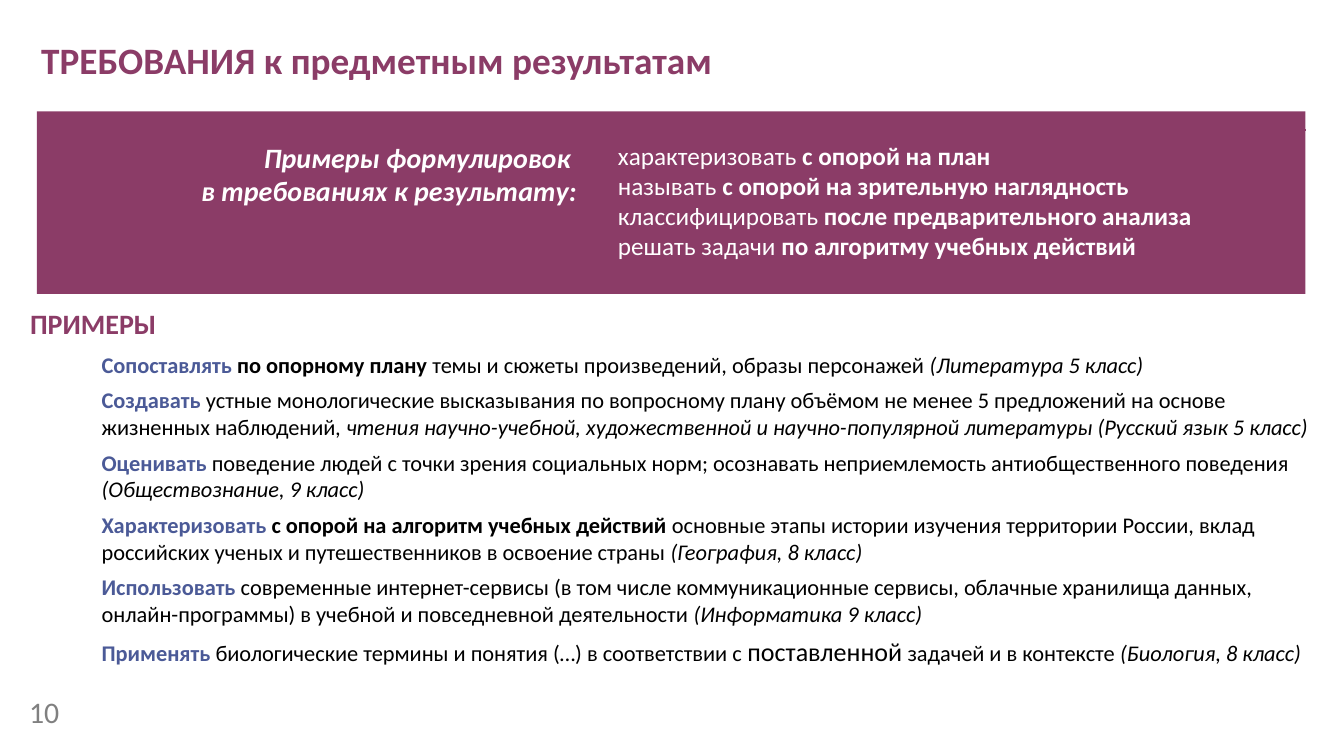
from lxml import etree
from pptx import Presentation
from pptx import util as u
from pptx.dml.color import RGBColor
from pptx.enum import shapes, text
from pptx.oxml.ns import qn

CELL = 0.1
FONT = "Calibri"
COLORS = {"plum": "8B3C67", "blue": "4B5A97", "gray": "808080",
          "white": "FFFFFF", "black": "000000"}

PLAIN = {"color": "black"}
BOLD = {"color": "black", "bold": True}
ITALIC = {"color": "black", "italic": True}
VERB = {"color": "blue", "bold": True}
LARGER = {"color": "black", "size": 18.6}
HEADING = {"color": "plum", "bold": True}
CAPTION = {"color": "white", "bold": True, "italic": True}
SKILL = {"color": "white"}
SUPPORT = {"color": "white", "bold": True}

SKILLS = [
    [("характеризовать ", SKILL), ("с опорой на план", SUPPORT)],
    [("называть ", SKILL), ("с опорой на зрительную наглядность", SUPPORT)],
    [("классифицировать ", SKILL), ("после предварительного анализа", SUPPORT)],
    [("решать задачи ", SKILL), ("по алгоритму учебных действий", SUPPORT)],
]

EXAMPLES = [
    [("Сопоставлять ", VERB), ("по опорному плану ", BOLD),
     ("темы и сюжеты произведений, образы персонажей", PLAIN),
     (" (Литература 5 класс)", ITALIC)],
    [("Создавать ", VERB),
     ("устные монологические высказывания по вопросному плану объёмом "
      "не менее 5 предложений на основе жизненных наблюдений", PLAIN),
     (", чтения научно-учебной, художественной и научно-популярной "
      "литературы (Русский язык 5 класс)", ITALIC)],
    [("Оценивать ", VERB),
     ("поведение людей с точки зрения социальных норм; осознавать "
      "неприемлемость антиобщественного поведения ", PLAIN),
     ("(Обществознание, 9 класс)", ITALIC)],
    [("Характеризовать ", VERB),
     ("с опорой на алгоритм учебных действий ", BOLD),
     ("основные этапы истории изучения территории России, вклад "
      "российских ученых и путешественников в освоение страны ", PLAIN),
     ("(География, 8 класс)", ITALIC)],
    [("Использовать ", VERB),
     ("современные интернет-сервисы (в том числе коммуникационные сервисы, "
      "облачные хранилища данных, онлайн-программы) в учебной и "
      "повседневной деятельности ", PLAIN),
     ("(Информатика 9 класс)", ITALIC)],
    [("Применять ", VERB),
     ("биологические термины и понятия (…) в соответствии с ", PLAIN),
     ("поставленной", LARGER), (" задачей и в контексте ", PLAIN),
     ("(Биология, 8 класс)", ITALIC)],
]


def grid(*cells):
    """Turn columns and rows of the grid into lengths."""
    return [u.Inches(cell * CELL) for cell in cells]


def rgb(name):
    """Look up a colour by its name."""
    return RGBColor.from_string(COLORS[name])


def add_panel(page, place, color, opacity=100):
    """Draw a filled rectangle without outline."""
    panel = page.shapes.add_shape(shapes.MSO_SHAPE.RECTANGLE, *grid(*place))
    panel.shadow.inherit = False
    panel.fill.solid()
    panel.fill.fore_color.rgb = rgb(color)
    panel.line.fill.background()
    if opacity < 100:
        tint = panel._element.spPr.find(qn("a:solidFill"))[0]
        etree.SubElement(tint, qn("a:alpha"), val=str(opacity * 1000))
    return panel


def add_rule(page, left, top, width, color):
    """Draw a horizontal line."""
    rule = page.shapes.add_connector(
        shapes.MSO_CONNECTOR.STRAIGHT, *grid(left, top, left + width, top))
    rule.line.color.rgb = rgb(color)
    rule.line.width = u.Pt(1.5)
    etree.SubElement(rule._element.spPr, qn("a:effectLst"))


def add_span(para, words, size, color, bold=False, italic=False):
    """Add one styled run to a paragraph."""
    span = para.add_run()
    span.text = words
    font = span.font
    font.name, font.size = FONT, u.Pt(size)
    font.bold, font.italic = bold, italic
    font.color.rgb = rgb(color)


def add_bullet(para, color):
    """Give a paragraph a hanging bullet."""
    props = para._p.get_or_add_pPr()
    indent = u.Inches(0.19)
    props.set("marL", str(indent))
    props.set("indent", str(-indent))
    tint = etree.SubElement(props, qn("a:buClr"))
    etree.SubElement(tint, qn("a:srgbClr"), val=COLORS[color])
    etree.SubElement(props, qn("a:buFont"), typeface="Arial")
    etree.SubElement(props, qn("a:buChar"), char="•")


def fill_text(box, size, paragraphs, align=text.PP_ALIGN.LEFT,
              gap=0, bullet=None, wrap=True):
    """Fill a box with paragraphs of styled runs."""
    frame = box.text_frame
    frame.word_wrap = wrap
    frame.vertical_anchor = text.MSO_ANCHOR.TOP
    for index, spans in enumerate(paragraphs):
        para = frame.paragraphs[0] if index == 0 else frame.add_paragraph()
        para.alignment = align
        if index and gap:
            para.space_before = u.Pt(gap)
        if bullet:
            add_bullet(para, bullet)
        for words, style in spans:
            if words == "\n":
                para.add_line_break()
            else:
                add_span(para, words, **{"size": size, **style})


def add_text(page, place, size, paragraphs, **options):
    """Place a text box and fill it."""
    box = page.shapes.add_textbox(*grid(*place))
    fill_text(box, size, paragraphs, **options)


def main():
    """Build the slide and save the deck."""
    deck = Presentation()
    deck.slide_width, deck.slide_height = u.Inches(13.33), u.Inches(7.5)
    page = deck.slides.add_slide(deck.slide_layouts[6])

    add_panel(page, (3.66, 11.06, 125.8, 18.1), "plum")
    add_text(page, (3.1, 3.2, 80.5, 5.5), 26.6,
             [[("ТРЕБОВАНИЯ к предметным результатам", HEADING)]])
    add_rule(page, 3.7, 12.9, 125.8, "plum")
    number = add_panel(page, (1.9, 68.3, 5, 4.6), "white", opacity=71)
    fill_text(number, 21.3, [[("10", {"color": "gray"})]], wrap=False)
    add_text(page, (17.4, 13.4, 40.8, 7.7), 20,
             [[("Примеры формулировок ", CAPTION), ("\n", CAPTION),
               ("в требованиях к результату:", CAPTION)]],
             align=text.PP_ALIGN.RIGHT)
    add_text(page, (58.4, 13.4, 62.1, 13.1), 18, SKILLS,
             bullet="plum", wrap=False)
    add_text(page, (2, 29.9, 18.3, 4.4), 20, [[("ПРИМЕРЫ", HEADING)]])
    examples = add_panel(page, (9.1, 34.36, 122.8, 32.6), "white")
    fill_text(examples, 16, EXAMPLES, gap=6)

    deck.save("out.pptx")


if __name__ == "__main__":
    main()
